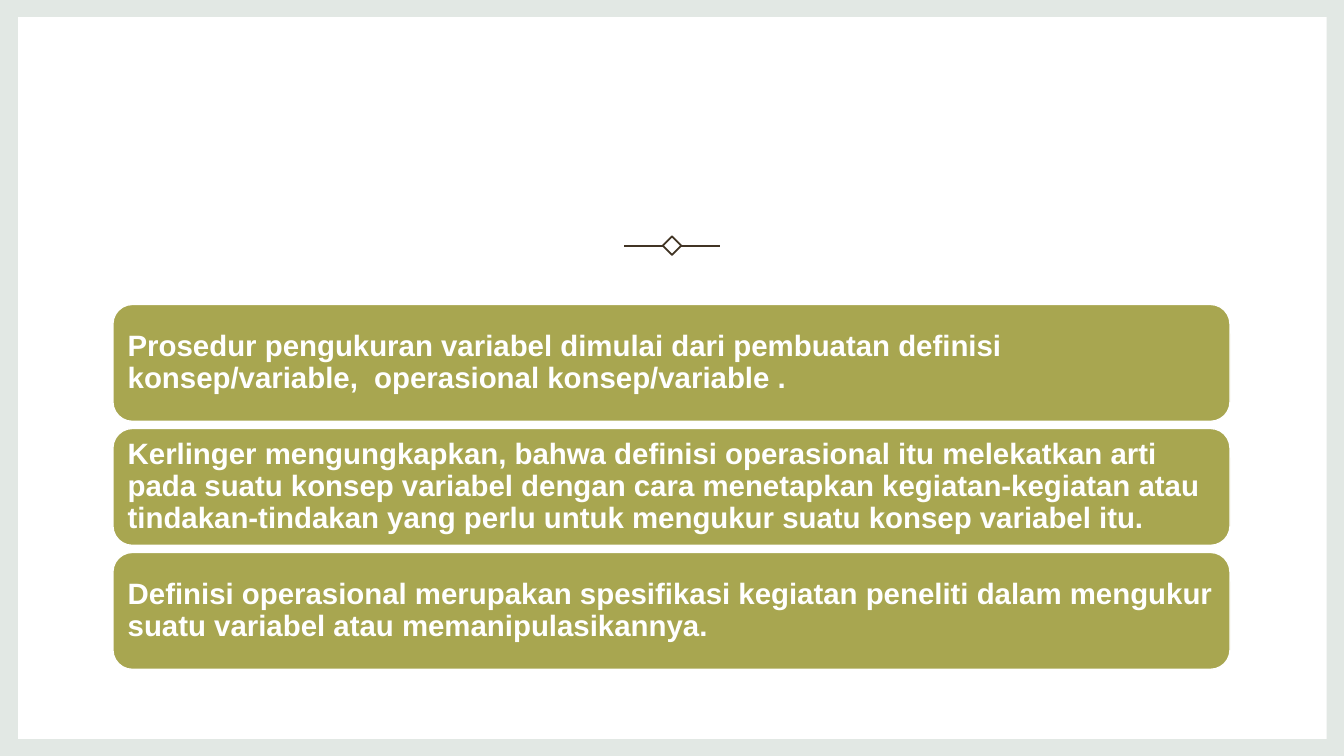
from lxml import etree
from pptx import Presentation
from pptx.dml.color import RGBColor
from pptx.enum.shapes import MSO_CONNECTOR, MSO_SHAPE
from pptx.enum.text import MSO_ANCHOR, PP_ALIGN
from pptx.oxml.ns import qn
from pptx.util import Inches, Pt

RECTANGLE = MSO_SHAPE.RECTANGLE
ROUNDED = MSO_SHAPE.ROUNDED_RECTANGLE
STRAIGHT = MSO_CONNECTOR.STRAIGHT
MIDDLE = MSO_ANCHOR.MIDDLE
LEFT = PP_ALIGN.LEFT

STATEMENTS = [
    "Prosedur pengukuran variabel dimulai dari pembuatan definisi "
    "konsep/variable,  operasional konsep/variable .",
    "Kerlinger mengungkapkan, bahwa definisi operasional itu melekatkan arti "
    "pada suatu konsep variabel dengan cara menetapkan kegiatan-kegiatan atau "
    "tindakan-tindakan yang perlu untuk mengukur suatu konsep variabel itu.",
    "Definisi operasional merupakan spesifikasi kegiatan peneliti dalam mengukur "
    "suatu variabel atau memanipulasikannya.",
]


def color(value):
    return RGBColor.from_string(value)


class SlideBuilder:
    """Draws styled elements on a slide divided into 100 columns and 100 rows."""

    FRAME = "E2E8E4"
    WHITE = "FFFFFF"
    INK = "413424"
    OLIVE = "A8A650"
    FONT = "Arial"
    TEXT_SIZE = 21
    ORNAMENT_WIDTH = 1.25

    def __init__(self, presentation):
        self.column = presentation.slide_width / 100
        self.row = presentation.slide_height / 100
        self.slide = presentation.slides.add_slide(presentation.slide_layouts[6])

    def place(self, columns, rows):
        return round(columns * self.column), round(rows * self.row)

    def box(self, left, top, width, height, fill=None, line=None, line_width=1, kind=RECTANGLE):
        shape = self.slide.shapes.add_shape(
            kind, *self.place(left, top), *self.place(width, height))
        shape.shadow.inherit = False
        if fill:
            shape.fill.solid()
            shape.fill.fore_color.rgb = color(fill)
        else:
            shape.fill.background()
        if line:
            shape.line.color.rgb = color(line)
            shape.line.width = Pt(line_width)
        else:
            shape.line.fill.background()
        return shape

    def rule(self, start, end, row):
        connector = self.slide.shapes.add_connector(
            STRAIGHT, *self.place(start, row), *self.place(end, row))
        connector.line.color.rgb = color(self.INK)
        connector.line.width = Pt(self.ORNAMENT_WIDTH)
        etree.SubElement(connector._element.spPr, qn("a:effectLst"))

    def ornament(self, center, row):
        width, height = 0.98, 1.73
        diamond = self.box(center - width / 2, row - height / 2, width, height,
                           line=self.INK, line_width=self.ORNAMENT_WIDTH)
        diamond.rotation = 45
        inner, outer = 0.68, 3.56
        self.rule(center + inner, center + outer, row)
        self.rule(center - outer, center - inner, row)

    def card(self, left, top, width, height, text):
        shape = self.box(left, top, width, height, self.OLIVE, self.WHITE, kind=ROUNDED)
        frame = shape.text_frame
        frame.text = text
        frame.word_wrap = True
        frame.vertical_anchor = MIDDLE
        frame.margin_left = frame.margin_right = Inches(0.09)
        frame.margin_top = frame.margin_bottom = Inches(0.09)
        paragraph = frame.paragraphs[0]
        paragraph.alignment = LEFT
        paragraph.line_spacing = 0.9
        font = paragraph.runs[0].font
        font.name = self.FONT
        font.size = Pt(self.TEXT_SIZE)
        font.bold = True
        font.color.rgb = color(self.WHITE)


def main():
    presentation = Presentation()
    presentation.slide_width = Inches(13.33)
    presentation.slide_height = Inches(7.5)
    builder = SlideBuilder(presentation)
    builder.box(0, 0, 100, 100, builder.FRAME)
    builder.box(1.35, 2.27, 97.37, 95.47, builder.WHITE)
    builder.ornament(50, 32.5)
    for index, statement in enumerate(STATEMENTS):
        builder.card(8.4, 40.27 + index * 16.4, 83.12, 15.47, statement)
    presentation.save("out.pptx")


if __name__ == "__main__":
    main()
